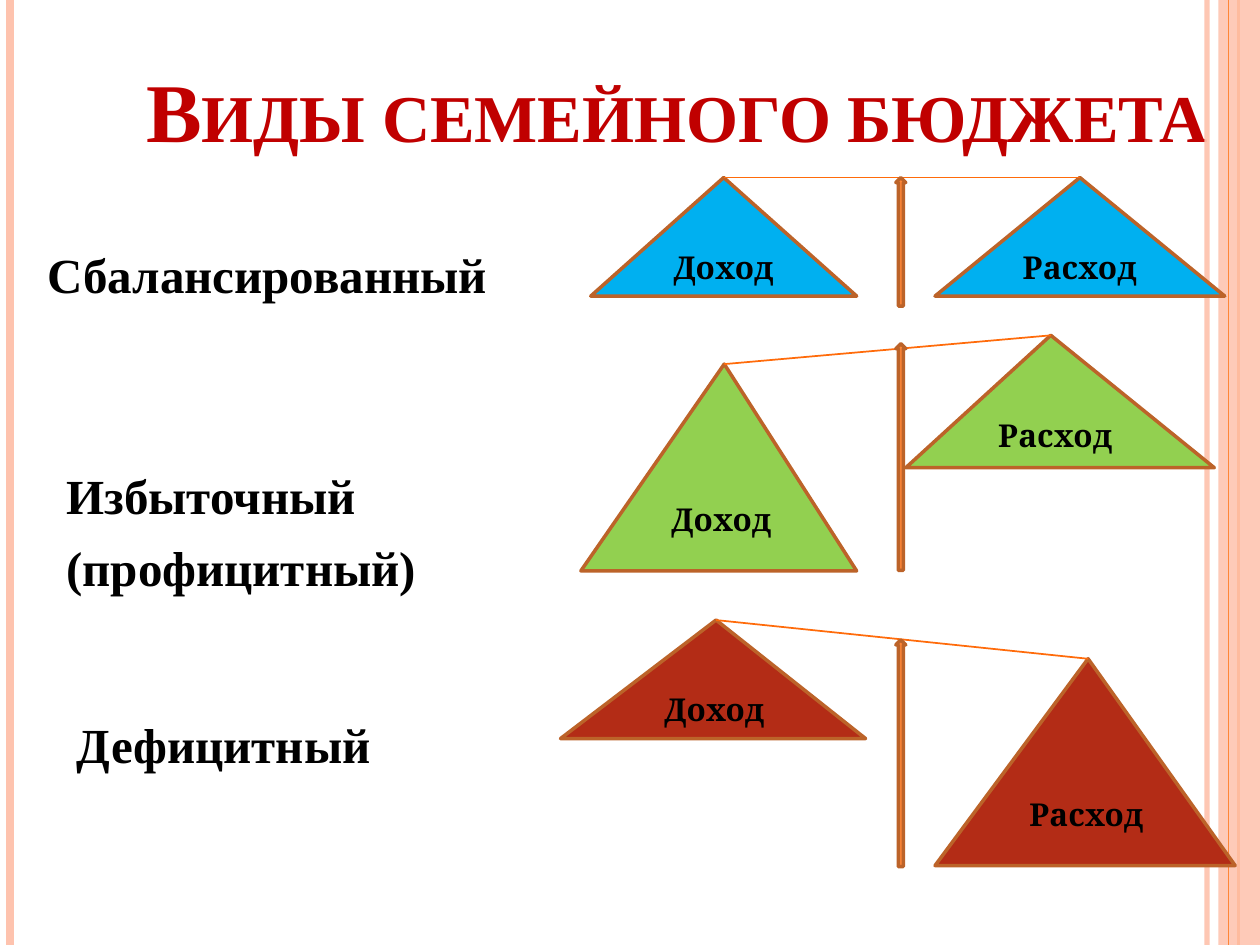
import pptx
import pptx.util
import pptx.dml.color
import pptx.enum.shapes
import pptx.enum.text
import pptx.oxml.ns
from lxml import etree

Cm, Pt = pptx.util.Cm, pptx.util.Pt
SHAPE = pptx.enum.shapes.MSO_SHAPE
ANCHOR = pptx.enum.text.MSO_ANCHOR
ALIGN = pptx.enum.text.PP_ALIGN
SERIF = "Times New Roman"
ORANGE, PEACH = "FE8637", "FEC3AE"

# Each triangle: left, top, width, height, apex position.
SCALES = [
    ("00B0F0", (11.91, 3.58, 5.36, 2.39, 0.5),
     (18.85, 3.58, 5.84, 2.39, 0.5), (3.58, 2.59)),
    ("92D050", (11.71, 7.34, 5.56, 4.17, 0.52),
     (18.26, 6.76, 6.22, 2.67, 0.47), (6.93, 4.57)),
    ("B32C16", (11.3, 12.5, 6.15, 2.39, 0.51),
     (18.85, 13.28, 6.05, 4.17, 0.51), (12.9, 4.57)),
]
LABELS = [
    (0.71, 4.8, 9.4, 1.45, ["Сбалансированный"]),
    (1.09, 9.25, 9.12, 2.9, ["Избыточный", "(профицитный)"]),
    (1.3, 14.27, 7.52, 1.45, ["Дефицитный"]),
]


def paint(fmt, color, alpha=None):
    """Give a fill a solid colour, with an opacity in percent if wanted."""
    fmt.solid()
    fmt.fore_color.rgb = pptx.dml.color.RGBColor.from_string(color)
    if alpha:
        tag = pptx.oxml.ns.qn("a:alpha")
        etree.SubElement(fmt._xPr.find(".//" + pptx.oxml.ns.qn("a:srgbClr")),
                         tag, val=str(alpha * 1000))


def style(para, face, size, color):
    """Set the bold font of a paragraph."""
    font = para.font
    font.name, font.size, font.bold = face, Pt(size), True
    paint(font.fill, color)


def line(slide, start, end, color, width, alpha=None):
    """Draw a straight line without a shadow."""
    item = slide.shapes.add_connector(
        pptx.enum.shapes.MSO_CONNECTOR.STRAIGHT,
        *(Cm(v) for v in (*start, *end)))
    item.line.width = Pt(width)
    paint(item.line.fill, color, alpha)
    etree.SubElement(item._element.spPr, pptx.oxml.ns.qn("a:effectLst"))


def shape(slide, kind, place, fill, edge="BC6329", alpha=None):
    """Add a filled shape, outlined if it has an edge colour."""
    item = slide.shapes.add_shape(kind, *(Cm(v) for v in place))
    item.shadow.inherit = False
    paint(item.fill, fill, alpha)
    if edge:
        item.line.width = Pt(2)
        paint(item.line.fill, edge)
    else:
        item.line.fill.background()
    return item


def pan(slide, place, fill, text):
    """Add a labelled triangle and return its apex."""
    left, top, width, height, apex = place
    item = shape(slide, SHAPE.ISOSCELES_TRIANGLE, place[:4], fill)
    item.adjustments[0] = apex
    frame = item.text_frame
    frame.vertical_anchor = ANCHOR.MIDDLE
    para = frame.paragraphs[0]
    para.text, para.alignment = text, ALIGN.CENTER
    style(para, "Cambria", 18, "000000")
    return left + width * apex, top


def scale(slide, fill, income, cost, post):
    """Draw a balance with two pans, a beam and a post."""
    start = pan(slide, income, fill, "Доход")
    end = pan(slide, cost, fill, "Расход")
    line(slide, start, end, "FF6B0A", 1)
    top, height = post
    shape(slide, SHAPE.UP_ARROW, (18.06, top, 0.2, height), ORANGE)


def label(slide, left, top, width, height, rows):
    """Add a text box with one paragraph per row."""
    box = slide.shapes.add_textbox(Cm(left), Cm(top), Cm(width), Cm(height))
    frame = box.text_frame
    frame.word_wrap = True
    frame.text = "\n".join(rows)
    for index, para in enumerate(frame.paragraphs):
        if index:
            para.space_before = Pt(8)
        style(para, SERIF, 28, "000000")


def title(slide, text):
    """Place and format the title in small capitals."""
    item = slide.shapes.title
    item.left, item.top, item.width, item.height = (
        Cm(v) for v in (1.9, 0.79, 23.5, 2.54))
    frame = item.text_frame
    frame.auto_size = pptx.enum.text.MSO_AUTO_SIZE.NONE
    frame.vertical_anchor = ANCHOR.BOTTOM
    para = frame.paragraphs[0]
    para.text, para.alignment = text, ALIGN.CENTER
    style(para, SERIF, 47.7, "C00000")
    para.font._rPr.set("cap", "small")


def stripes(slide):
    """Draw the vertical bands at both sides."""
    def rule(left, color, width, alpha=None):
        line(slide, (left, 0), (left, 19.05), color, width, alpha)

    rule(24.33, PEACH, 3, 93)
    rule(0.2, PEACH, 4.5)
    rule(24.97, ORANGE, 1.5)
    shape(slide, SHAPE.RECTANGLE, (24.56, 0, 0.84, 19.05), PEACH, None, 87)
    rule(24.77, ORANGE, 0.75)


def main():
    """Build the slide and save it."""
    deck = pptx.Presentation()
    deck.slide_width, deck.slide_height = Cm(25.4), Cm(19.05)
    slide = deck.slides.add_slide(deck.slide_layouts[5])
    stripes(slide)
    title(slide, "Виды семейного бюджета")
    for row in LABELS:
        label(slide, *row)
    for row in SCALES:
        scale(slide, *row)
    deck.save("out.pptx")


if __name__ == "__main__":
    main()
